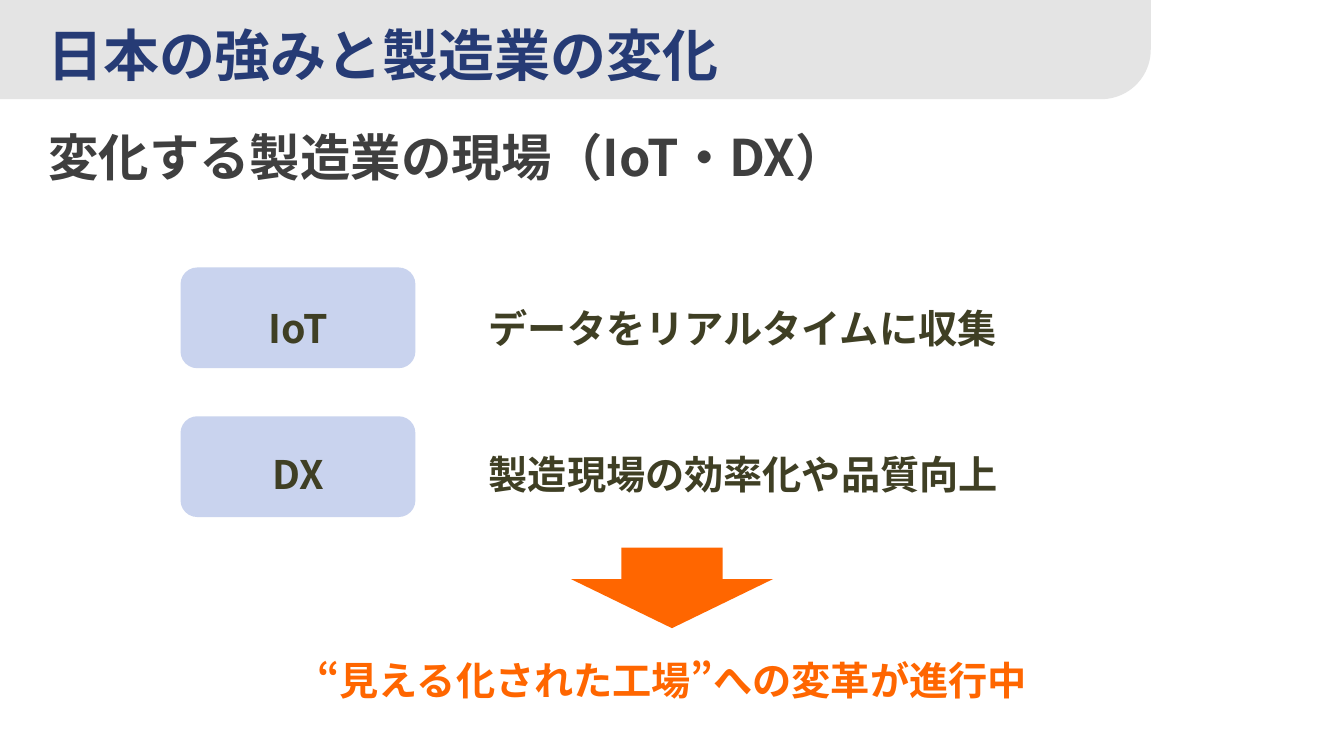
from lxml.etree import SubElement
from pptx import Presentation
from pptx.dml.color import RGBColor
from pptx.enum.lang import MSO_LANGUAGE_ID
from pptx.enum.shapes import MSO_SHAPE
from pptx.enum.text import MSO_ANCHOR, PP_ALIGN
from pptx.oxml.ns import qn
from pptx.util import Cm, Pt

FONT = "Noto Sans CJK JP"
NAVY, GRAY, OLIVE, ORANGE = "263B75", "3F3F3F", "3F3F24", "FF6600"
BAND, LABEL = "E4E4E4", "C9D3EE"


def color(value):
    """Turn a hex string into a colour."""
    return RGBColor.from_string(value)


def add_text(slide, text, box, size=28, fill=OLIVE, align=PP_ALIGN.LEFT,
             spacing=None, top=0.13, bottom=0.13, wrap=True):
    """Add one bold Japanese paragraph in a text box."""
    frame = slide.shapes.add_textbox(*map(Cm, box)).text_frame
    frame.word_wrap = wrap
    frame.vertical_anchor = MSO_ANCHOR.TOP
    frame.margin_top, frame.margin_bottom = Cm(top), Cm(bottom)
    paragraph = frame.paragraphs[0]
    paragraph.alignment = align
    if spacing:
        paragraph.line_spacing = spacing
    run = paragraph.add_run()
    run.text = text
    run.font.size = Pt(size)
    run.font.bold = True
    run.font.language_id = MSO_LANGUAGE_ID.JAPANESE
    run.font.color.rgb = color(fill)
    run.font.name = FONT
    SubElement(run.font._element, qn("a:ea")).set("typeface", FONT)


def add_block(slide, kind, box, fill):
    """Add a plain filled shape without an outline."""
    shape = slide.shapes.add_shape(kind, *map(Cm, box))
    shape.shadow.inherit = False
    shape.fill.solid()
    shape.fill.fore_color.rgb = color(fill)
    shape.line.fill.background()
    return shape


def add_header(slide, box, title, subtitle):
    """Place the title band with its rounded lower corner and both headings."""
    left, top, width, height = box
    turned = (left + (width - height) / 2, top - (width - height) / 2, height, width)
    band = add_block(slide, MSO_SHAPE.ROUND_1_RECTANGLE, turned, BAND)
    band.rotation = 90
    band.adjustments[0] = 0.5
    add_text(slide, title, (left + 0.94, top + 0.33, width - 0.94, 1.9),
             size=40, fill=NAVY, top=0.2, bottom=0)
    add_text(slide, subtitle, (left + 0.97, top + 3.05, 29.7, 1.8), size=36, fill=GRAY)


def add_topic(slide, box, label, description, text_offset):
    """Place a rounded label with its description to the right."""
    left, top, width, height = box
    add_block(slide, MSO_SHAPE.ROUNDED_RECTANGLE, box, LABEL)
    text_top = top + text_offset
    add_text(slide, label, (left + 0.74, text_top, width - 1.45, 1.9),
             align=PP_ALIGN.CENTER, spacing=1.5)
    add_text(slide, description, (left + 7.52, text_top, 15.04, 1.9), spacing=1.5)


def add_conclusion(slide, box, text):
    """Place the down arrow centred above the closing statement."""
    left, top, width, height = box
    arrow_width, arrow_height = 5.1, 2.03
    arrow_left = left + (width - arrow_width) / 2
    arrow = add_block(slide, MSO_SHAPE.DOWN_ARROW,
                      (arrow_left, top, arrow_width, arrow_height), ORANGE)
    arrow.adjustments[0] = 0.5
    arrow.adjustments[1] = 0.61
    add_text(slide, text, (left, top + height - 1.45, width, 1.45),
             fill=ORANGE, align=PP_ALIGN.CENTER, wrap=False)


def main():
    """Build and save the slide."""
    presentation = Presentation()
    presentation.slide_width, presentation.slide_height = Cm(33.87), Cm(19.05)
    slide = presentation.slides.add_slide(presentation.slide_layouts[6])
    add_header(slide, (0, 0, 29, 2.5), "日本の強みと製造業の変化",
               "変化する製造業の現場（IoT・DX）")
    topics = [("IoT", "データをリアルタイムに収集", 0.2),
              ("DX", "製造現場の効率化や品質向上", 0.13)]
    for index, topic in enumerate(topics):
        add_topic(slide, (4.55, 6.74 + index * 3.75, 5.92, 2.54), *topic)
    add_conclusion(slide, (7.56, 13.8, 18.75, 4.06),
                   "“見える化された工場”への変革が進行中")
    presentation.save("out.pptx")


if __name__ == "__main__":
    main()
